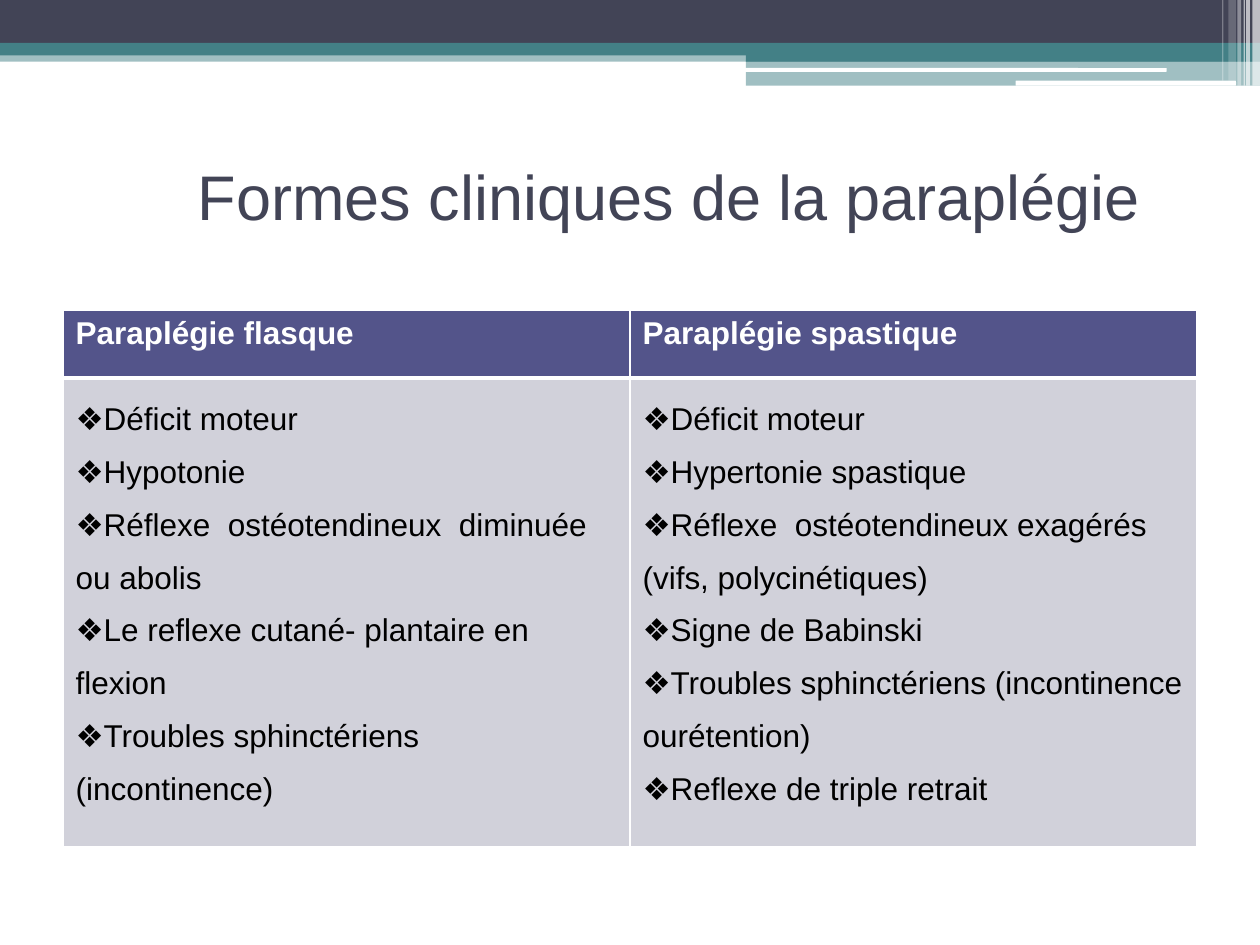
from dataclasses import dataclass
from lxml.etree import SubElement
from pptx import Presentation
from pptx.dml.color import RGBColor
from pptx.enum.shapes import MSO_SHAPE
from pptx.enum.text import MSO_ANCHOR
from pptx.oxml.ns import qn
from pptx.util import Inches, Pt


@dataclass(frozen=True)
class Theme:
    font: str = "Arial"
    dark: str = "424456"
    teal: str = "438086"
    head: str = "53548A"
    body: str = "D1D1DA"
    white: str = "FFFFFF"
    black: str = "000000"
    title: int = 36
    text: int = 18


class Deck:
    def __init__(self, theme, cols=100, rows=75):
        self.theme = theme
        self.file = Presentation()
        self.file.slide_width = Inches(10)
        self.file.slide_height = Inches(7.5)
        self.col = self.file.slide_width / cols
        self.row = self.file.slide_height / rows
        self.slide = self.file.slides.add_slide(self.file.slide_layouts[6])

    def place(self, x, y, w, h):
        return (int(x * self.col), int(y * self.row),
                int(w * self.col), int(h * self.row))

    def style(self, font, size, color, bold=False):
        font.name = self.theme.font
        font.size = Pt(size)
        font.bold = bold
        font.color.rgb = RGBColor.from_string(color)

    def bar(self, box, color, alpha=100, kind=MSO_SHAPE.RECTANGLE):
        shape = self.slide.shapes.add_shape(kind, *self.place(*box))
        shape.shadow.inherit = False
        shape.fill.solid()
        shape.fill.fore_color.rgb = RGBColor.from_string(color)
        shape.line.fill.background()
        if alpha < 100:
            tint = shape.fill._xPr.find(".//" + qn("a:srgbClr"))
            SubElement(tint, qn("a:alpha"), val=str(alpha * 1000))

    def title(self, box, text, indent):
        frame = self.slide.shapes.add_textbox(*self.place(*box)).text_frame
        frame.word_wrap = True
        frame.vertical_anchor = MSO_ANCHOR.TOP
        frame.margin_top = 0
        frame.margin_left = int(indent * self.col)
        frame.text = text
        self.style(frame.paragraphs[0].runs[0].font,
                   self.theme.title, self.theme.dark)

    def edge(self, cell, base):
        props = cell._tc.get_or_add_tcPr()
        sides = {"lnL": 1, "lnR": 1, "lnT": 1, "lnB": base}
        for spot, (side, width) in enumerate(sides.items()):
            line = SubElement(props, qn("a:" + side), w=str(Pt(width)))
            fill = SubElement(line, qn("a:solidFill"))
            SubElement(fill, qn("a:srgbClr"), val=self.theme.white)
            props.insert(spot, line)

    def cell(self, cell, lines, color, ink, head):
        cell.fill.solid()
        cell.fill.fore_color.rgb = RGBColor.from_string(color)
        self.edge(cell, 3 if head else 1)
        cell.text_frame.text = "\n".join(lines)
        for para in cell.text_frame.paragraphs:
            if not head:
                para.line_spacing = 1.5
                props = para._p.get_or_add_pPr()
                props.set("marL", "0")
                props.set("indent", "0")
                SubElement(props, qn("a:buFont"), typeface=self.theme.font)
                SubElement(props, qn("a:buChar"), char="❖")
            for run in para.runs:
                self.style(run.font, self.theme.text, ink, head)

    def table(self, box, heads, lists, high):
        grid = self.slide.shapes.add_table(
            2, len(heads), *self.place(*box)).table
        grid.horz_banding = False
        for row, size in zip(grid.rows, high):
            row.height = int(size * self.row)
        look = self.theme
        for i, (head, items) in enumerate(zip(heads, lists)):
            self.cell(grid.cell(0, i), [head], look.head, look.white, True)
            self.cell(grid.cell(1, i), items, look.body, look.black, False)

    def save(self):
        self.file.save("out.pptx")


def main():
    theme = Theme()
    deck = Deck(theme)
    bands = [
        ((0, 4, 100, 0.9), theme.teal, 50),
        ((0, 0, 100, 3.4), theme.dark, 100),
        ((0, 3.4, 100, 1), theme.teal, 100),
        ((59.2, 3.9, 40.8, 1), theme.teal, 100),
        ((59.2, 4.8, 40.8, 2), theme.teal, 50),
    ]
    for band in bands:
        deck.bar(*band)
    for box in [(59.1, 5.4, 33.5, 0.3), (80.6, 6.4, 17.5, 0.4)]:
        deck.bar(box, theme.white, kind=MSO_SHAPE.ROUNDED_RECTANGLE)
    stripes = [
        (99.4, 0.6, 6.8, 65),
        (98.9, 0.3, 6.8, 65),
        (98.7, 0.1, 6.8, 60),
        (98.2, 0.3, 6.8, 40),
        (97.5, 0.6, 6.4, 20),
        (97, 0.1, 6.4, 30),
    ]
    for left, wide, high, alpha in stripes:
        deck.bar((left, 0, wide, high), theme.white, alpha)

    deck.title((5, 12.5, 90, 11.7), "Formes cliniques de la paraplégie", 10.7)
    flaccid = [
        "Déficit moteur",
        "Hypotonie",
        "Réflexe  ostéotendineux  diminuée ou abolis",
        "Le reflexe cutané- plantaire en flexion",
        "Troubles sphinctériens (incontinence)",
    ]
    spastic = [
        "Déficit moteur",
        "Hypertonie spastique",
        "Réflexe  ostéotendineux exagérés (vifs, polycinétiques)",
        "Signe de Babinski",
        "Troubles sphinctériens (incontinence ourétention)",
        "Reflexe de triple retrait",
    ]
    deck.table((5, 24.6, 90, 42.6),
               ["Paraplégie flasque", "Paraplégie spastique"],
               [flaccid, spastic], [5.4, 37.2])
    deck.save()


if __name__ == "__main__":
    main()
